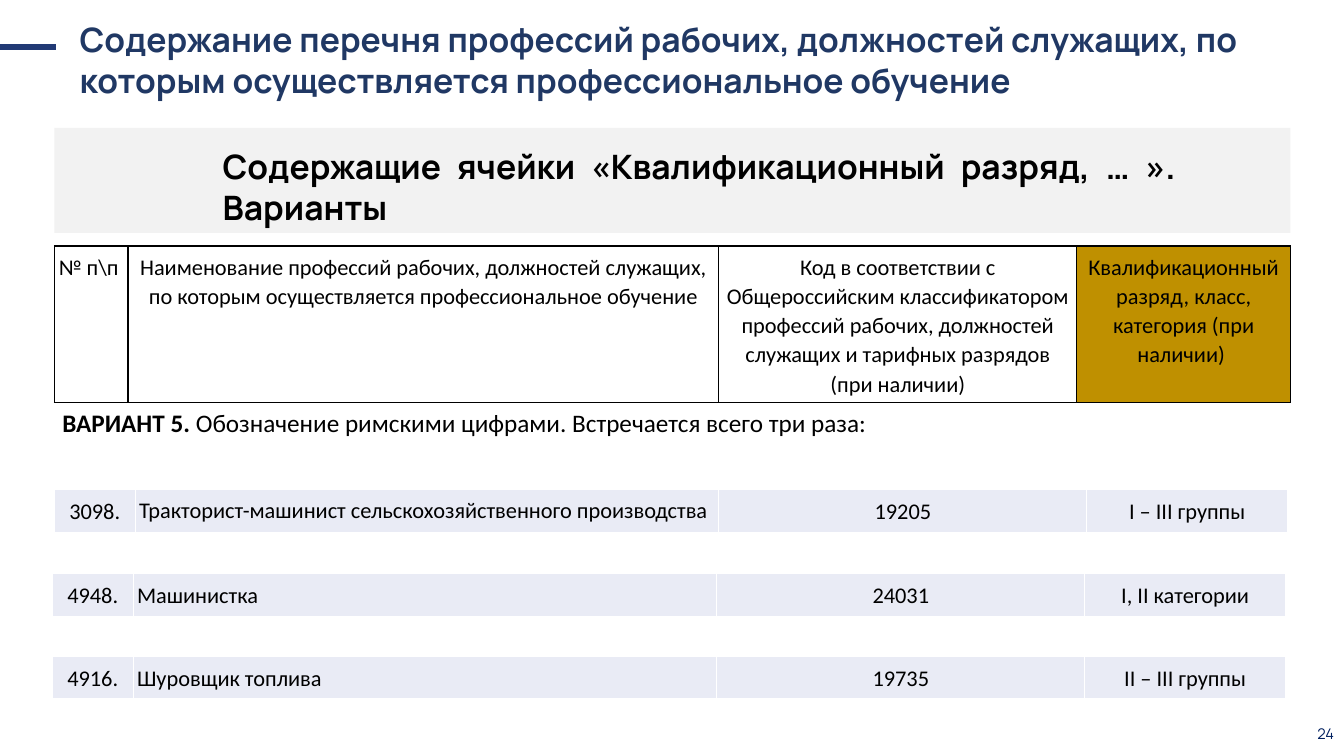
from pptx import Presentation
from pptx import util as u
from pptx.dml.color import RGBColor
from pptx.enum import shapes, text
from pptx.oxml import parse_xml
from pptx.oxml.ns import nsdecls

PX = 9144
BLACK = RGBColor(0, 0, 0)
WHITE = RGBColor(255, 255, 255)
NAVY = RGBColor(0x20, 0x38, 0x64)
ACCENT = RGBColor(0x21, 0x3A, 0x75)
NUMBER = RGBColor(0x00, 0x20, 0x60)
PANEL = RGBColor(0xF2, 0xF2, 0xF2)
GOLD = RGBColor(0xBF, 0x90, 0x00)
PALE = RGBColor(0xE9, 0xEB, 0xF5)
LEFT, CENTER, RIGHT, JUSTIFY = (
    text.PP_ALIGN.LEFT, text.PP_ALIGN.CENTER, text.PP_ALIGN.RIGHT, text.PP_ALIGN.JUSTIFY)

HEADINGS = [
    "№ п\\п ",
    "Наименование профессий рабочих, должностей служащих, "
    "по которым осуществляется профессиональное обучение",
    "Код в соответствии с Общероссийским классификатором профессий рабочих, "
    "должностей служащих и тарифных разрядов (при наличии)",
    "Квалификационный разряд, класс, категория (при наличии) ",
]
HEADING_COLS = [73, 586, 355, 212]
JOB_COLS = [80, 579, 365, 199]
JOBS = [
    (54, 486, ["3098.", "Тракторист-машинист сельскохозяйственного производства",
               "19205", "I – III группы"], None),
    (52, 569, ["4948.", "Машинистка", "24031", "I, II категории"], 1.06),
    (52, 651, ["4916.", "Шуровщик топлива", "19735", "II – III группы"], 1.06),
]


def px(*values):
    return [u.Emu(v * PX) for v in values]


def write(tf, runs, size=16, font="Calibri", color=BLACK, align=LEFT, spacing=None, after=None):
    tf.word_wrap = True
    p = tf.paragraphs[0]
    p.alignment = align
    if spacing:
        p.line_spacing = spacing
    if after is not None:
        p.space_after = u.Pt(after)
    for words, bold in runs:
        r = p.add_run()
        r.text = words
        r.font.size = u.Pt(size)
        r.font.name = font
        r.font.bold = bold
        r.font.color.rgb = color


def add_text(s, box, runs, anchor=text.MSO_ANCHOR.TOP, **fmt):
    tf = s.shapes.add_textbox(*px(*box)).text_frame
    tf.vertical_anchor = anchor
    write(tf, runs, **fmt)


def add_borders(cell, color):
    tc_pr = cell._tc.get_or_add_tcPr()
    for i, side in enumerate(("lnL", "lnR", "lnT", "lnB")):
        tc_pr.insert(i, parse_xml(
            f'<a:{side} {nsdecls("a")} w="12700"><a:solidFill>'
            f'<a:srgbClr val="{color}"/></a:solidFill></a:{side}>'))


def add_row_table(s, box, cols, values, fills, border, aligns, name_spacing=1.06):
    table = s.shapes.add_table(1, len(cols), *px(*box)).table
    table.first_row = table.horz_banding = False
    for i, (width, value, fill, align) in enumerate(zip(cols, values, fills, aligns)):
        table.columns[i].width = px(width)[0]
        cell = table.cell(0, i)
        cell.margin_left, cell.margin_top, cell.margin_right, cell.margin_bottom = px(4, 7, 4, 7)
        if fill is None:
            cell.fill.background()
        else:
            cell.fill.solid()
            cell.fill.fore_color.rgb = fill
        add_borders(cell, border)
        spacing = name_spacing if i == 1 else 1.06
        write(cell.text_frame, [(value, False)], align=align,
              spacing=spacing, after=8 if spacing else 0)


def add_title(s, box):
    x, y, w, h = box
    add_text(s, box, [("Содержание перечня профессий рабочих, должностей служащих, "
                       "по которым осуществляется профессиональное обучение", True)],
             size=24, font="Manrope", color=NAVY)
    line = s.shapes.add_connector(shapes.MSO_CONNECTOR.STRAIGHT, *px(0, y + 33, x - 13, y + 33))
    line.line.color.rgb = ACCENT
    line.line.width = u.Pt(4.5)
    line._element.spPr.append(parse_xml(f'<a:effectLst {nsdecls("a")}/>'))


def add_panel(s, box):
    x, y, w, h = box
    sp = s.shapes.add_shape(shapes.MSO_SHAPE.RECTANGLE, *px(*box))
    sp.shadow.inherit = False
    sp.fill.solid()
    sp.fill.fore_color.rgb = PANEL
    sp.line.fill.background()
    add_text(s, (x + 157, y + 13, w - 261, h - 13),
             [("Содержащие ячейки «Квалификационный разряд, … ». Варианты", True)],
             size=24, font="Manrope", align=JUSTIFY)


def add_jobs(s, width, height):
    for x, y, values, name_spacing in JOBS:
        add_row_table(s, (x, y, width, height), JOB_COLS, values, [PALE] * 4, WHITE,
                      [CENTER, LEFT, CENTER, CENTER], name_spacing)


def main():
    prs = Presentation()
    prs.slide_width, prs.slide_height = px(1333, 750)
    s = prs.slides.add_slide(prs.slide_layouts[6])
    add_panel(s, (54, 127, 1226, 104))
    add_title(s, (69, 14, 1211, 91))
    add_text(s, (1281, 708, 52, 40), [("24", False)], anchor=text.MSO_ANCHOR.MIDDLE,
             size=10.5, font="Manrope", color=NUMBER, align=RIGHT)
    add_row_table(s, (54, 244, sum(HEADING_COLS), 154), HEADING_COLS, HEADINGS,
                  [None, None, None, GOLD], BLACK, [CENTER] * 4)
    add_text(s, (52, 384, 1225, 103),
             [("ВАРИАНТ 5.", True),
              (" Обозначение римскими цифрами. Встречается всего три раза:", False)],
             size=18, align=JUSTIFY, spacing=1.5, after=8)
    add_jobs(s, sum(JOB_COLS), 41)
    prs.save("out.pptx")


if __name__ == "__main__":
    main()
